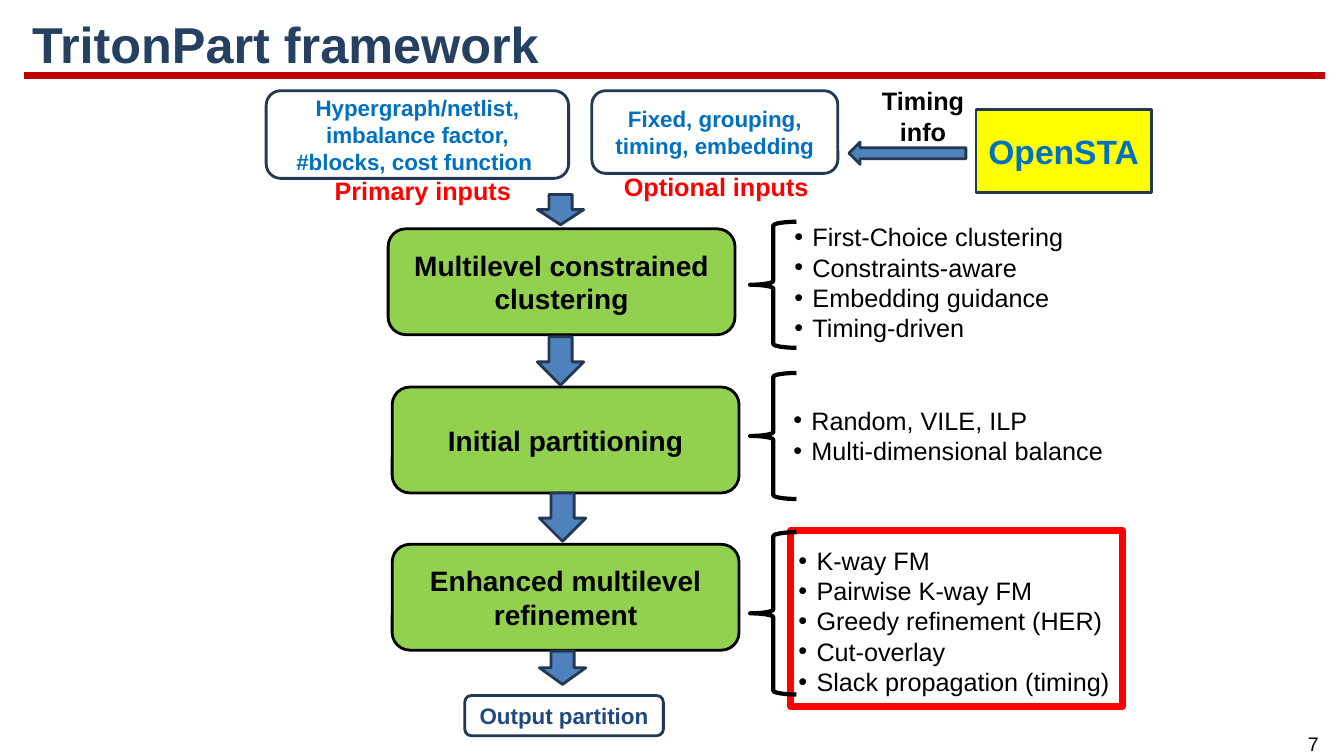
from lxml.etree import SubElement
from pptx import Presentation
from pptx.dml.color import RGBColor
from pptx.enum.shapes import MSO_CONNECTOR, MSO_SHAPE
from pptx.enum.text import MSO_ANCHOR, PP_ALIGN
from pptx.oxml.ns import qn
from pptx.util import Inches, Pt

BLACK = RGBColor(0x00, 0x00, 0x00)
WHITE = RGBColor(0xFF, 0xFF, 0xFF)
RED = RGBColor(0xFF, 0x00, 0x00)
RULE_RED = RGBColor(0xC0, 0x00, 0x00)
NAVY = RGBColor(0x25, 0x40, 0x61)
OUTLINE = RGBColor(0x23, 0x39, 0x53)
INK_BLUE = RGBColor(0x1F, 0x49, 0x7D)
BLUE = RGBColor(0x00, 0x70, 0xC0)
ARROW_BLUE = RGBColor(0x4F, 0x81, 0xBD)
GREEN = RGBColor(0x92, 0xD0, 0x50)
YELLOW = RGBColor(0xFF, 0xFF, 0x00)

prs = Presentation()
prs.slide_width, prs.slide_height = Inches(13.33), Inches(7.5)
s = prs.slides.add_slide(prs.slide_layouts[6])


def add_text(box, lines, size, color, bold=True, align=PP_ALIGN.CENTER,
             anchor=MSO_ANCHOR.MIDDLE, bullet=False):
    tf = box.text_frame
    tf.word_wrap = True
    tf.vertical_anchor = anchor
    for i, line in enumerate(lines):
        p = tf.paragraphs[0] if i == 0 else tf.add_paragraph()
        p.alignment = align
        if bullet:
            pPr = p._p.get_or_add_pPr()
            pPr.set("marL", str(Inches(0.18)))
            pPr.set("indent", str(Inches(-0.18)))
            SubElement(pPr, qn("a:buFont")).set("typeface", "Arial")
            SubElement(pPr, qn("a:buChar")).set("char", "•")
        r = p.add_run()
        r.text = line
        r.font.name = "Arial"
        r.font.size = Pt(size)
        r.font.bold = bold
        r.font.color.rgb = color


def add_box(kind, x, y, w, h, fill=None, line=OUTLINE, width=2):
    sp = s.shapes.add_shape(kind, Inches(x), Inches(y), Inches(w), Inches(h))
    sp.shadow.inherit = False
    if fill is None:
        sp.fill.background()
    else:
        sp.fill.solid()
        sp.fill.fore_color.rgb = fill
    sp.line.color.rgb = line
    sp.line.width = Pt(width)
    return sp


# Title and red rule
rule = s.shapes.add_connector(MSO_CONNECTOR.STRAIGHT, Inches(0.24), Inches(0.75),
                              Inches(13.14), Inches(0.75))
rule.line.color.rgb = RULE_RED
rule.line.width = Pt(4.5)
SubElement(rule._element.spPr, qn("a:effectLst"))
title = s.shapes.add_textbox(Inches(0.22), Inches(0.14), Inches(9.68), Inches(0.65))
add_text(title, ["TritonPart framework"], 36, NAVY, align=PP_ALIGN.LEFT)
title.text_frame.paragraphs[0].line_spacing = 0.9

# Highlight around the refinement methods
add_box(MSO_SHAPE.RECTANGLE, 7.84, 5.26, 3.29, 1.75, line=RED, width=4.75)

# Stages, each with a brace and its list of methods
stages = [
    ("Multilevel constrained clustering", 3.85, 2.27, 2.2, 1.25, 7.78, 2.15, 1.58,
     ["First-Choice clustering", "Constraints-aware", "Embedding guidance",
      "Timing-driven"]),
    ("Initial partitioning", 3.89, 3.84, 3.7, 1.25, 7.77, 3.97, 0.71,
     ["Random, VILE, ILP", "Multi-dimensional balance"]),
    ("Enhanced multilevel refinement", 3.89, 5.4, 5.28, 1.61, 7.82, 5.36, 1.62,
     ["K-way FM", "Pairwise K-way FM", "Greedy refinement (HER)", "Cut-overlay",
      "Slack propagation (timing)"]),
]
for name, x, y, brace_y, brace_h, list_x, list_y, list_h, methods in stages:
    sp = add_box(MSO_SHAPE.ROUNDED_RECTANGLE, x, y, 3.44, 1.05, GREEN, BLACK)
    add_text(sp, [name], 20, BLACK)
    add_box(MSO_SHAPE.LEFT_BRACE, 7.44, brace_y, 0.46, brace_h, line=BLACK, width=3)
    tb = s.shapes.add_textbox(Inches(list_x), Inches(list_y), Inches(3.52), Inches(list_h))
    add_text(tb, methods, 18, BLACK, bold=False, align=PP_ALIGN.LEFT,
             anchor=MSO_ANCHOR.TOP, bullet=True)

# Flow arrows
for x, y, h in [(5.33, 1.93, 0.3), (5.33, 3.34, 0.48), (5.35, 4.89, 0.48),
                (5.35, 6.46, 0.33)]:
    add_box(MSO_SHAPE.DOWN_ARROW, x, y, 0.46, h, ARROW_BLUE)
timing_arrow = add_box(MSO_SHAPE.RIGHT_ARROW, 8.42, 1.41, 1.16, 0.22, ARROW_BLUE)
timing_arrow.rotation = 180

# Inputs, timing engine and output
ROUND, RECT = MSO_SHAPE.ROUNDED_RECTANGLE, MSO_SHAPE.RECTANGLE
for kind, x, y, w, h, fill, text, size, color in [
    (ROUND, 2.64, 0.9, 3, 0.87, WHITE,
     "Hypergraph/netlist, imbalance factor, #blocks, cost function ", 16, BLUE),
    (ROUND, 5.87, 0.9, 2.44, 0.82, WHITE, "Fixed, grouping, timing, embedding", 16, BLUE),
    (ROUND, 4.61, 6.9, 1.97, 0.4, WHITE, "Output partition", 16, INK_BLUE),
    (RECT, 9.68, 1.09, 1.74, 0.82, YELLOW, "OpenSTA", 24, BLUE),
]:
    add_text(add_box(kind, x, y, w, h, fill), [text], size, color)

# Labels and page number
for x, y, w, h, text, size, color, bold, align in [
    (3.22, 1.69, 2.83, 0.4, "Primary inputs", 18, RED, True, PP_ALIGN.LEFT),
    (6.09, 1.65, 2.83, 0.4, "Optional inputs", 18, RED, True, PP_ALIGN.LEFT),
    (8.52, 0.8, 1.27, 0.71, "Timing info", 18, BLACK, True, PP_ALIGN.CENTER),
    (12.73, 7.21, 0.59, 0.34, "7", 14, BLACK, False, PP_ALIGN.CENTER),
]:
    tb = s.shapes.add_textbox(Inches(x), Inches(y), Inches(w), Inches(h))
    add_text(tb, [text], size, color, bold, align, MSO_ANCHOR.TOP)

prs.save("out.pptx")
